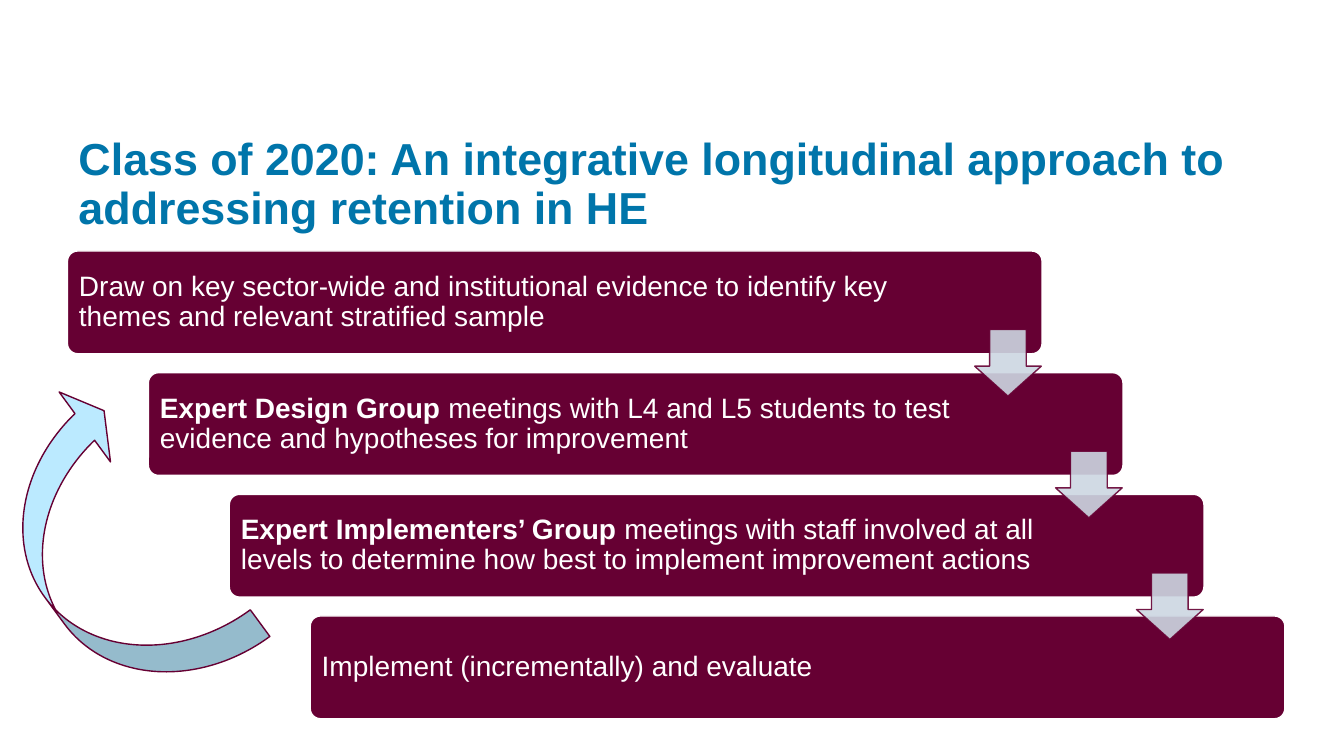
from dataclasses import dataclass

from lxml.etree import SubElement
from pptx import Presentation
from pptx.dml.color import RGBColor
from pptx.enum.shapes import MSO_SHAPE
from pptx.enum.text import MSO_ANCHOR, PP_ALIGN
from pptx.oxml.ns import qn
from pptx.util import Pt


@dataclass(frozen=True)
class Theme:
    font: str = "Arial"
    title_size: int = 32
    body_size: int = 20
    title: str = "0075AA"
    maroon: str = "660033"
    white: str = "FFFFFF"
    step_arrow: str = "CCD6E2"
    loop_arrow: str = "BBEAFF"


THEME = Theme()

# Each step: bold lead, remaining text, width of the text area
STEPS = [
    ("", "Draw on key sector-wide and institutional evidence to identify key "
         "themes and relevant stratified sample", 610.6),
    ("Expert Design Group ", "meetings with L4 and L5 students to test "
                             "evidence and hypotheses for improvement", 586.4),
    ("Expert Implementers’ Group ", "meetings with staff involved at all levels to "
                                    "determine how best to implement improvement actions", 586.4),
    ("", "Implement (incrementally) and evaluate", 586.4),
]
STEP_LEFT, STEP_TOP = 48.2, 179.3
STEP_RIGHT, STEP_DOWN = 57.8, 86.9
STEP_WIDTH, STEP_HEIGHT = 696.2, 73.4
TEXT_MARGIN = 2.2
ARROW_SIZE = 47.6


def add_figure(slide, kind, left, top, width, height, adjustments, fill, line):
    shape = slide.shapes.add_shape(kind, Pt(left), Pt(top), Pt(width), Pt(height))
    for index, value in enumerate(adjustments):
        shape.adjustments[index] = value
    shape.shadow.inherit = False
    shape.fill.solid()
    shape.fill.fore_color.rgb = RGBColor.from_string(fill)
    shape.line.color.rgb = RGBColor.from_string(line)
    shape.line.width = Pt(1)
    return shape


def set_opacity(shape, percent):
    for color in shape.element.spPr.iter(qn("a:srgbClr")):
        SubElement(color, qn("a:alpha"), val=str(percent * 1000))


def add_text(slide, left, top, width, height, spans, size, color, anchor, insets):
    box = slide.shapes.add_textbox(Pt(left), Pt(top), Pt(width), Pt(height))
    frame = box.text_frame
    frame.word_wrap = True
    frame.vertical_anchor = anchor
    frame.margin_left = frame.margin_right = Pt(insets[0])
    frame.margin_top = frame.margin_bottom = Pt(insets[1])
    para = frame.paragraphs[0]
    para.alignment = PP_ALIGN.LEFT
    para.line_spacing = 0.9
    para.font.name = THEME.font
    para.font.size = Pt(size)
    para.font.color.rgb = RGBColor.from_string(color)
    for text, bold in spans:
        if text:
            span = para.add_run()
            span.text = text
            span.font.bold = bold


def add_step(slide, left, top, lead, text, text_width):
    add_figure(slide, MSO_SHAPE.ROUNDED_RECTANGLE, left, top, STEP_WIDTH, STEP_HEIGHT,
               [0.1], THEME.maroon, THEME.white)
    add_text(slide, left + TEXT_MARGIN, top + TEXT_MARGIN, text_width,
             STEP_HEIGHT - 2 * TEXT_MARGIN, [(lead, True), (text, False)],
             THEME.body_size, THEME.white, MSO_ANCHOR.MIDDLE, (6, 6))


def add_step_arrow(slide, left, top):
    arrow = add_figure(slide, MSO_SHAPE.DOWN_ARROW, left, top, ARROW_SIZE, ARROW_SIZE,
                       [0.55, 0.45], THEME.step_arrow, THEME.maroon)
    set_opacity(arrow, 90)


def main():
    deck = Presentation()
    deck.slide_width, deck.slide_height = Pt(960), Pt(540)
    slide = deck.slides.add_slide(deck.slide_layouts[6])

    # Title
    add_text(slide, 49, 94.3, 861.8, 90,
             [("Class of 2020: An integrative longitudinal approach to "
               "addressing retention in HE", True)],
             THEME.title_size, THEME.title, MSO_ANCHOR.TOP, (7.2, 3.6))

    # Staircase of steps, then the arrows that lie over them
    places = [(STEP_LEFT + i * STEP_RIGHT, STEP_TOP + i * STEP_DOWN)
              for i in range(len(STEPS))]
    for (left, top), step in zip(places, STEPS):
        add_step(slide, left, top, *step)
    for left, top in places[:-1]:
        add_step_arrow(slide, left + 648, top + 56.1)

    # Loop back from the last step to the second
    loop = add_figure(slide, MSO_SHAPE.CURVED_LEFT_ARROW, 22.3, 279.4, 113, 231.1,
                      [0.209, 0.549, 0.159], THEME.loop_arrow, THEME.maroon)
    loop.rotation = 143.7

    deck.save("out.pptx")


if __name__ == "__main__":
    main()
